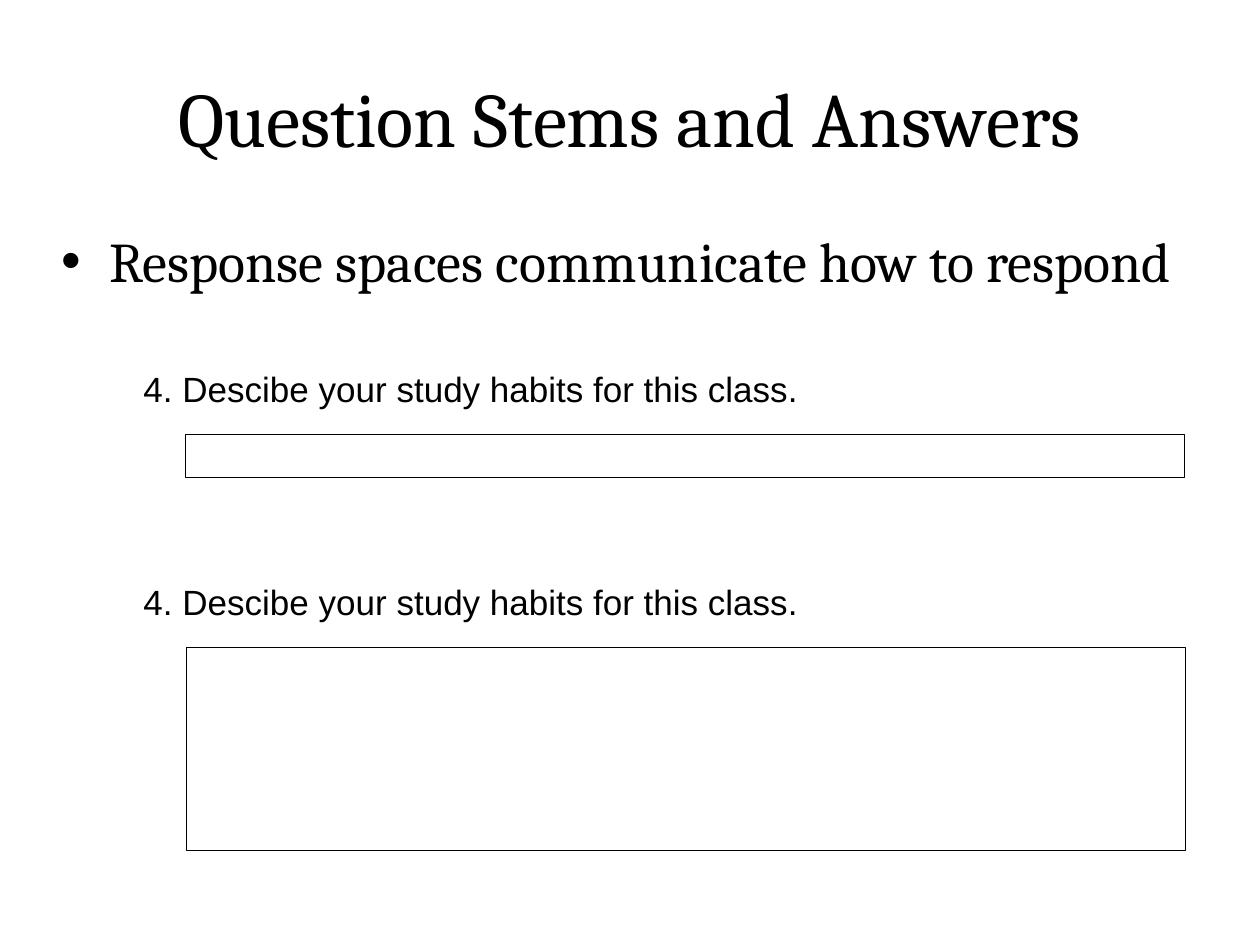
from pptx import Presentation
from pptx.dml.color import RGBColor
from pptx.enum.shapes import MSO_SHAPE
from pptx.enum.text import MSO_ANCHOR, PP_ALIGN
from pptx.oxml import parse_xml
from pptx.oxml.ns import nsdecls
from pptx.util import Inches, Pt

BLACK = RGBColor(0x00, 0x00, 0x00)
WHITE = RGBColor(0xFF, 0xFF, 0xFF)
QUESTION = "4. Descibe your study habits for this class."


def place(sp, left, top, width, height):
    sp.left, sp.top = Inches(left), Inches(top)
    sp.width, sp.height = Inches(width), Inches(height)


def write(tf, text, font, size):
    """Put one formatted paragraph in the frame and return it."""
    tf.word_wrap = True
    p = tf.paragraphs[0]
    p.text = text
    p.font.name, p.font.size = font, Pt(size)
    p.font.color.rgb = BLACK
    return p


def set_indent(p, indent):
    pPr = p._p.get_or_add_pPr()
    pPr.set("marL", str(Inches(indent)))
    pPr.set("indent", str(-Inches(indent)))
    return pPr


def add_title(slide, left, top, width, height):
    sp = slide.shapes.title
    place(sp, left, top, width, height)
    p = write(sp.text_frame, "Question Stems and Answers", "Cambria", 44)
    p.alignment = PP_ALIGN.CENTER
    sp.text_frame.vertical_anchor = MSO_ANCHOR.MIDDLE


def add_body(slide, left, top, width, height):
    sp = slide.placeholders[1]
    place(sp, left, top, width, height)
    p = write(sp.text_frame, "Response spaces communicate how to respond",
              "Cambria", 32)
    pPr = set_indent(p, 0.38)
    bullet = parse_xml(f'<a:buChar {nsdecls("a")} char="•"/>')
    pPr.insert_element_before(bullet, "a:tabLst", "a:defRPr", "a:extLst")


def add_question(slide, left, top, width, height, space_left, space_height):
    """Add a question stem with its response space below it."""
    stem = slide.shapes.add_textbox(Inches(left), Inches(top),
                                    Inches(width), Inches(height))
    set_indent(write(stem.text_frame, QUESTION, "Arial", 20), 0.31)

    space = slide.shapes.add_shape(
        MSO_SHAPE.RECTANGLE, Inches(left + space_left), Inches(top + 0.58),
        Inches(7.93), Inches(space_height))
    space.shadow.inherit = False
    space.fill.solid()
    space.fill.fore_color.rgb = WHITE
    space.line.color.rgb = BLACK
    space.line.width = Pt(0.75)


def main():
    prs = Presentation()
    prs.slide_width, prs.slide_height = Inches(10), Inches(7.5)
    slide = prs.slides.add_slide(prs.slide_layouts[1])
    add_title(slide, 0.5, 0.3, 9, 1.25)
    add_body(slide, 0.39, 1.75, 9.3, 1.92)
    add_question(slide, 1.04, 2.87, 8.65, 1.62, 0.43, 0.34)
    add_question(slide, 1.04, 4.56, 8.65, 1.62, 0.44, 1.61)
    prs.save("out.pptx")


if __name__ == "__main__":
    main()
